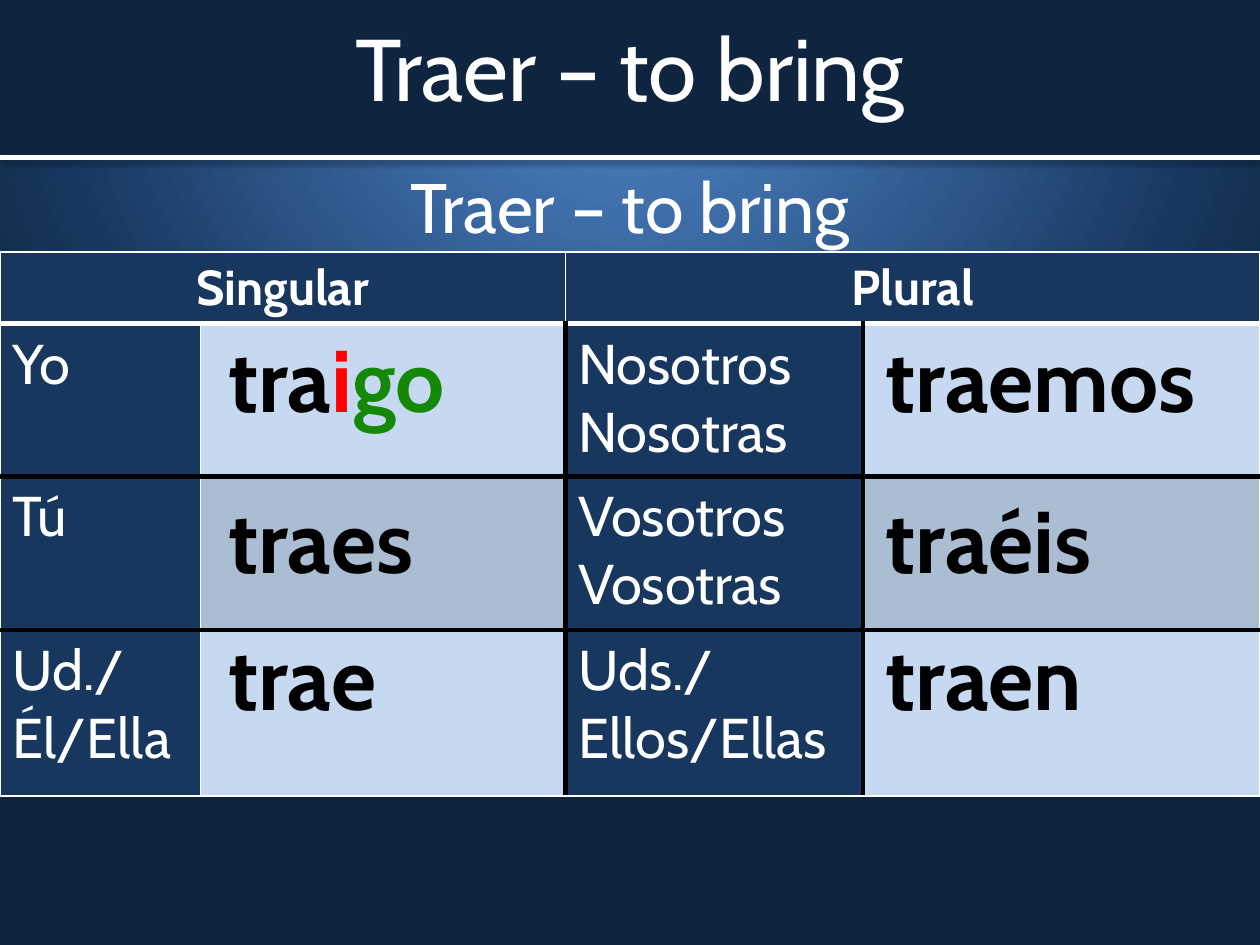
from pptx import Presentation, util as u
from pptx.dml.color import RGBColor
from pptx.enum import shapes, text
from pptx.oxml import parse_xml
from pptx.oxml.ns import nsdecls, qn

NAVY, DARK, PALE, GREY = "17375E", "0F243E", "C6D9F1", "ABBDD2"
WHITE, BLACK, RED, GREEN = "FFFFFF", "000000", "FF0000", "158808"
THIN, WHITE_RULE, BLACK_RULE = (WHITE, 1), (WHITE, 3), (BLACK, 3)
NO_STYLE = "{2D5ABB26-0587-4C30-8999-92F81FD0307C}"


def rgb(value):
    return RGBColor.from_string(value)


def inches(*values):
    return [u.Inches(v) for v in values]


class Deck:
    font = "Cabin"

    def __init__(self, prs):
        self.s = prs.slides.add_slide(prs.slide_layouts[6])

    def background(self, stops):
        gs = "".join(f'<a:gs pos="{pos * 1000}"><a:srgbClr val="{c}"/></a:gs>'
                     for pos, c in stops)
        self.s._element.cSld.insert(0, parse_xml(
            f'<p:bg {nsdecls("p", "a")}><p:bgPr><a:gradFill><a:gsLst>{gs}</a:gsLst>'
            '<a:path path="circle"><a:fillToRect l="50000" t="-80000" r="50000" b="180000"/>'
            '</a:path></a:gradFill><a:effectLst/></p:bgPr></p:bg>'))

    def band(self, box, color):
        sp = self.s.shapes.add_shape(shapes.MSO_SHAPE.RECTANGLE, *inches(*box))
        sp.shadow.inherit = False
        sp.fill.solid()
        sp.fill.fore_color.rgb = rgb(color)
        sp.line.fill.background()

    def rule(self, ends, color, width):
        sp = self.s.shapes.add_connector(shapes.MSO_CONNECTOR.STRAIGHT, *inches(*ends))
        sp.line.color.rgb = rgb(color)
        sp.line.width = u.Pt(width)
        sp._element.spPr.append(parse_xml(
            f'<a:effectLst {nsdecls("a")}><a:outerShdw blurRad="{u.Pt(3.1)}" '
            f'dist="{u.Pt(1.6)}" dir="5400000" rotWithShape="0"><a:srgbClr val="000000">'
            '<a:alpha val="38000"/></a:srgbClr></a:outerShdw></a:effectLst>'))

    def add_runs(self, p, runs, size, bold=False, center=False):
        p.alignment = text.PP_ALIGN.CENTER if center else text.PP_ALIGN.LEFT
        for words, color in runs:
            r = p.add_run()
            r.text = words
            r.font.color.rgb = rgb(color)
            style = {"name": self.font, "size": u.Pt(size), "bold": bold}
            for name, value in style.items():
                setattr(r.font, name, value)

    def heading(self, words, box, size, anchor):
        tf = self.s.shapes.add_textbox(*inches(*box)).text_frame
        tf.word_wrap = True
        tf.vertical_anchor = anchor
        self.add_runs(tf.paragraphs[0], [(words, WHITE)], size, center=True)

    def table(self, left, top, cols, rows):
        frame = self.s.shapes.add_table(len(rows), len(cols),
                                        *inches(left, top, sum(cols), sum(rows)))
        tbl = frame.table
        tbl.first_row = tbl.horz_banding = False
        tbl._tbl.tblPr.find(qn("a:tableStyleId")).text = NO_STYLE
        for col, width in zip(tbl.columns, inches(*cols)):
            col.width = width
        for row, height in zip(tbl.rows, inches(*rows)):
            row.height = height
        return tbl

    def cell(self, cell, color, borders):
        cell.fill.solid()
        cell.fill.fore_color.rgb = rgb(color)
        tcPr = cell._tc.get_or_add_tcPr()
        for i, (side, (line, width)) in enumerate(zip("LRTB", borders)):
            tcPr.insert(i, parse_xml(
                f'<a:ln{side} {nsdecls("a")} w="{u.Pt(width)}"><a:solidFill>'
                f'<a:srgbClr val="{line}"/></a:solidFill></a:ln{side}>'))

    def verb(self, left, top, width, runs):
        cell = self.table(left, top, [width], [0.93]).cell(0, 0)
        cell.fill.background()
        self.add_runs(cell.text_frame.paragraphs[0], runs, 50, bold=True)


def main():
    prs = Presentation()
    prs.slide_width, prs.slide_height = inches(10, 7.5)
    deck = Deck(prs)
    deck.background([(0, "558ED5"), (75, NAVY), (100, DARK)])

    # Title band and headings
    title = "Traer – to bring"
    deck.band((0, 0, 10, 1.25), DARK)
    deck.heading(title, (0, 1.25, 10, 5.2), 40, text.MSO_ANCHOR.TOP)
    deck.rule((0, 1.25, 10, 1.25), WHITE, 3)
    deck.heading(title, (0, 0, 10, 1.06), 50, text.MSO_ANCHOR.MIDDLE)

    # Conjugation grid: fills and borders
    tbl = deck.table(0, 2, [1.59, 2.9, 2.36, 3.15], [0.57, 1.21, 1.22, 1.32])
    across = [THIN, WHITE_RULE, BLACK_RULE, BLACK_RULE, THIN]
    down = [THIN, THIN, BLACK_RULE, BLACK_RULE, THIN]
    for i in range(4):
        for j in range(4):
            color = NAVY if i == 0 or j % 2 == 0 else GREY if i == 2 else PALE
            sides = (down[j], down[j + 1]) if i else (THIN, THIN)
            deck.cell(tbl.cell(i, j), color, (*sides, across[i], across[i + 1]))

    # Column headings
    for j, words in ((0, "Singular"), (2, "Plural")):
        tbl.cell(0, j).merge(tbl.cell(0, j + 1))
        deck.add_runs(tbl.cell(0, j).text_frame.paragraphs[0], [(words, WHITE)],
                      28, bold=True, center=True)

    # Pronouns
    pronouns = [(["Yo"], ["Nosotros", "Nosotras"]),
                (["Tú"], ["Vosotros", "Vosotras"]),
                (["Ud./Él/Ella"], ["Uds./Ellos/Ellas"])]
    for i, pair in enumerate(pronouns, 1):
        for j, lines in zip((0, 2), pair):
            tf = tbl.cell(i, j).text_frame
            for n, words in enumerate(lines):
                p = tf.add_paragraph() if n else tf.paragraphs[0]
                deck.add_runs(p, [(words, WHITE)], 32)

    # Verb forms, each in its own one-cell table
    tops = (2.55, 3.83, 4.92)
    singular = [(2.46, [("tra", BLACK), ("i", RED), ("go", GREEN)]),
                (2.34, [("traes", BLACK)]), (2.46, [("trae", BLACK)])]
    plural = [(3.07, [("traemos", BLACK)]),
              (2.52, [("traéis", BLACK)]), (2.4, [("traen", BLACK)])]
    for left, forms in ((1.71, singular), (6.93, plural)):
        for top, (width, runs) in zip(tops, forms):
            deck.verb(left, top, width, runs)

    prs.save("out.pptx")


if __name__ == "__main__":
    main()
